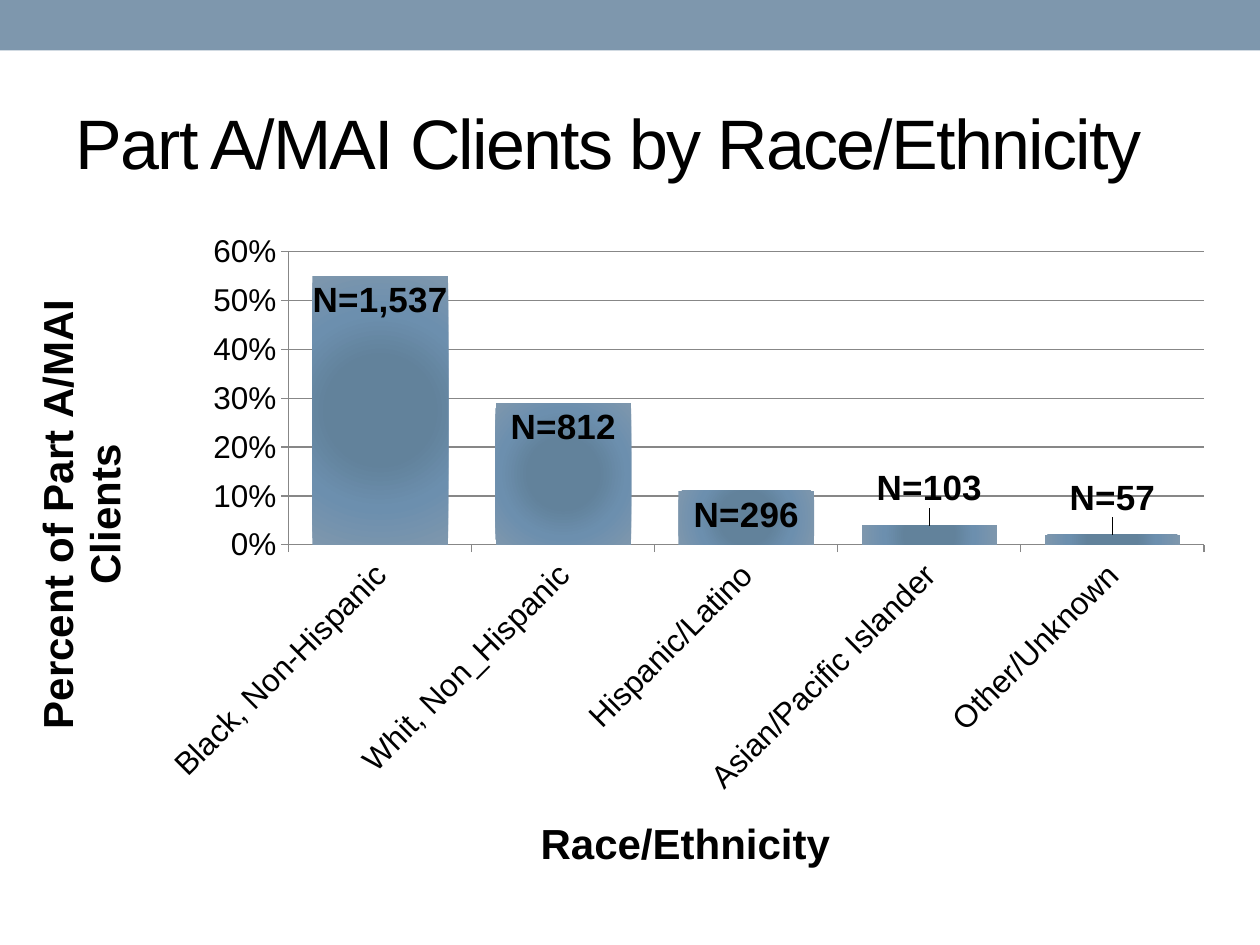
from lxml.etree import SubElement
from pptx import Presentation
from pptx.chart.data import CategoryChartData
from pptx.dml.color import RGBColor
from pptx.enum.chart import XL_CHART_TYPE, XL_LABEL_POSITION, XL_TICK_MARK
from pptx.enum.shapes import MSO_SHAPE
from pptx.enum.text import MSO_ANCHOR, PP_ALIGN
from pptx.oxml import parse_xml
from pptx.oxml.ns import nsdecls, qn
from pptx.util import Inches, Pt

TITLE = "Part A/MAI Clients by Race/Ethnicity"
CATEGORY_TITLE = "Race/Ethnicity"
VALUE_TITLE = "Percent of Part A/MAI Clients"
CLIENTS = {
    "Black, Non-Hispanic": 1537,
    "Whit, Non_Hispanic": 812,
    "Hispanic/Latino": 296,
    "Asian/Pacific Islander": 103,
    "Other/Unknown": 57,
}
COLORS = {"band": "7E97AD", "text": "000000", "line": "878787",
          "center": "62829B", "middle": "6C8FAE", "edge": "7E97AD"}
GRADIENT = (("center", 0), ("center", 35), ("middle", 65), ("edge", 100))
SMALL_SHARE = 0.05
LABEL_LIFT = {"x": 0, "y": -0.09}


def rgb(name):
    return RGBColor.from_string(COLORS[name])


def set_values(target, values):
    for attribute, value in values.items():
        setattr(target, attribute, value)


def set_font(font, size, bold=False):
    set_values(font, {"name": "Arial", "size": Pt(size), "bold": bold})
    font.color.rgb = rgb("text")


def manual_layout(values):
    layout = parse_xml(f"<c:layout {nsdecls('c')}><c:manualLayout/></c:layout>")
    for tag, value in values.items():
        SubElement(layout[0], qn(f"c:{tag}")).set("val", str(value))
    return layout


def no_leader_lines():
    return parse_xml(
        f'<c:extLst {nsdecls("c")}><c:ext uri="{{CE6537A1-D6FC-4f65-9D91-7224C49458BB}}" '
        'xmlns:c15="http://schemas.microsoft.com/office/drawing/2012/chart">'
        '<c15:showLeaderLines val="0"/></c:ext></c:extLst>')


def radial_fill():
    stops = "".join(
        f'<a:gs pos="{percent * 1000}"><a:srgbClr val="{COLORS[name]}"/></a:gs>'
        for name, percent in GRADIENT)
    return parse_xml(
        f'<a:gradFill {nsdecls("a")} rotWithShape="1"><a:gsLst>{stops}</a:gsLst>'
        '<a:path path="circle"><a:fillToRect l="50000" t="50000" r="50000" b="50000"/>'
        '</a:path></a:gradFill>')


def add_heading(slide):
    band = slide.shapes.add_shape(MSO_SHAPE.RECTANGLE, 0, 0, Inches(10), Inches(0.4))
    band.shadow.inherit = False
    band.fill.solid()
    band.fill.fore_color.rgb = rgb("band")
    band.line.fill.background()

    title = slide.shapes.title
    set_values(title, {"left": Inches(0.5), "top": Inches(0.58),
                       "width": Inches(9.25), "height": Inches(1.08)})
    title.text_frame.text = TITLE
    title.text_frame.vertical_anchor = MSO_ANCHOR.MIDDLE
    heading = title.text_frame.paragraphs[0]
    heading.alignment = PP_ALIGN.LEFT
    set_font(heading.runs[0].font, 40)
    heading.runs[0].font._element.set("spc", "-100")


def format_axis(axis, title):
    axis.has_title = True
    axis.axis_title.text_frame.text = title
    set_font(axis.axis_title.text_frame.paragraphs[0].runs[0].font, 24, True)
    set_values(axis, {"major_tick_mark": XL_TICK_MARK.OUTSIDE,
                      "minor_tick_mark": XL_TICK_MARK.NONE})
    axis.format.line.color.rgb = rgb("line")
    set_font(axis.tick_labels.font, 18)


def format_axes(chart):
    categories, percent = chart.category_axis, chart.value_axis
    format_axis(categories, CATEGORY_TITLE)
    categories._element.find(qn("c:txPr")).find(qn("a:bodyPr")).set("rot", "-2700000")
    format_axis(percent, VALUE_TITLE)
    percent.axis_title.text_frame._txBody.bodyPr.set("rot", "-5400000")
    set_values(percent, {"minimum_scale": 0, "maximum_scale": 0.6, "major_unit": 0.1})
    percent.major_gridlines.format.line.color.rgb = rgb("line")
    set_values(percent.tick_labels, {"number_format": "0%", "number_format_is_linked": False})


def label_columns(series, shares):
    labels = series.data_labels
    set_values(labels, {"show_value": True, "position": XL_LABEL_POSITION.INSIDE_END,
                        "number_format": "0.00%", "number_format_is_linked": False})
    set_font(labels.font, 20, True)
    for index, (count, share) in enumerate(zip(CLIENTS.values(), shares)):
        label = series.points[index].data_label
        label.text_frame.text = f"N={count:,}"
        set_font(label.text_frame.paragraphs[0].runs[0].font, 20, True)
        label.position = XL_LABEL_POSITION.INSIDE_END
        if share < SMALL_SHARE:
            entry = label.text_frame._txBody.getparent().getparent()
            entry.find(qn("c:idx")).addnext(manual_layout(LABEL_LIFT))
    labels._element.append(no_leader_lines())


def add_chart(slide):
    total = sum(CLIENTS.values())
    shares = [round(count / total, 2) for count in CLIENTS.values()]
    data = CategoryChartData(number_format="0%")
    data.categories = list(CLIENTS)
    data.add_series("Series 1", shares)
    chart = slide.shapes.add_chart(
        XL_CHART_TYPE.COLUMN_STACKED, 0, Inches(1.75), Inches(9.75), Inches(5.41), data).chart
    set_values(chart, {"has_legend": False, "has_title": False})
    set_font(chart.font, 18)
    format_axes(chart)

    plot = chart.plots[0]
    set_values(plot, {"gap_width": 35, "overlap": 100, "vary_by_categories": False})
    series = plot.series[0]
    series.format.fill.solid()
    columns = series._element.spPr
    columns.replace(columns.find(qn("a:solidFill")), radial_fill())
    label_columns(series, shares)


def main():
    """Build the slide of clients by race and ethnicity."""
    deck = Presentation()
    set_values(deck, {"slide_width": Inches(10), "slide_height": Inches(7.5)})
    slide = deck.slides.add_slide(deck.slide_layouts[5])
    add_heading(slide)
    add_chart(slide)
    deck.save("out.pptx")


if __name__ == "__main__":
    main()
